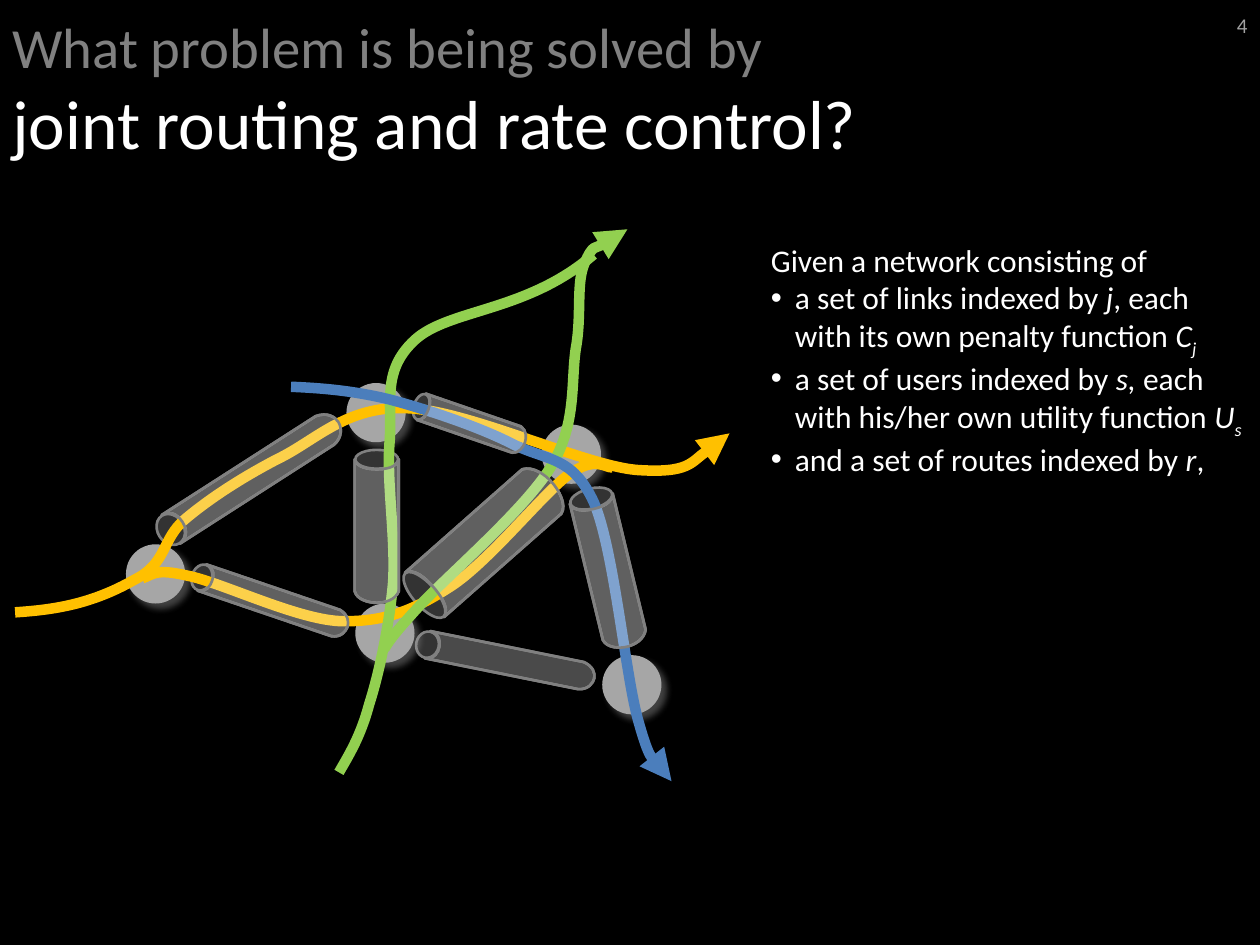
from dataclasses import dataclass
from typing import NamedTuple

from lxml.etree import SubElement
from pptx import Presentation
from pptx.dml.color import RGBColor
from pptx.enum.shapes import MSO_SHAPE
from pptx.enum.text import MSO_ANCHOR, PP_ALIGN
from pptx.oxml.ns import qn
from pptx.util import Inches, Pt
from math import cos, radians, sin


@dataclass(frozen=True)
class Theme:
    font: str = "Calibri"
    back: str = "000000"
    text: str = "FFFFFF"
    muted: str = "808080"
    number: str = "A2A2A2"
    pipe: str = "7F7F7F"
    glass: str = "F8F8F8"
    mouth: str = "333333"
    edge: str = "808080"
    node: str = "A6A6A6"
    orange: str = "FFC000"
    green: str = "92D050"
    blue: str = "4B7EBC"
    small_title: float = 32.4
    big_title: float = 39.6
    body: float = 18
    number_size: float = 12
    edge_width: float = 1.5
    flow_width: float = 6


class Pipe(NamedTuple):
    x: float
    y: float
    length: float
    width: float
    rotation: float
    mouth: float
    busy: bool = True


class Flow(NamedTuple):
    color: str
    arrow: bool
    points: list


class Span(NamedTuple):
    text: str
    italic: bool = False
    sub: bool = False


T = Theme()
NODE_SIZE = 0.47
NODES = [(2.75, 3.04), (1, 4.32), (4.3, 3.37), (2.82, 4.79), (4.78, 5.2)]
PIPES = [
    Pipe(1.23, 3.64, 1.58, 0.27, 327.3, 0.21),
    Pipe(3.32, 3.26, 0.87, 0.22, 19, 0.12),
    Pipe(4.23, 4.37, 1.21, 0.35, 76.4, 0.16),
    Pipe(2.42, 4.04, 1.14, 0.35, 90, 0.15),
    Pipe(3.38, 5.14, 1.35, 0.22, 11.4, 0.18, busy=False),
    Pipe(1.57, 4.67, 1.22, 0.22, 18.8, 0.16),
    Pipe(3.2, 4.04, 1.35, 0.47, 318.6, 0.18),
]
PIPE_OUTLINE = [
    ("moveTo", [(0, 1)]),
    ("lnTo", [(0.92, 1)]),
    ("cubicBezTo", [(0.98, 0.95), (1, 0.67), (1, 0.5)]),
    ("cubicBezTo", [(1, 0.32), (0.98, 0.08), (0.92, 0)]),
    ("lnTo", [(0, 0)]),
    ("cubicBezTo", [(0.06, 0.05), (0.07, 0.3), (0.07, 0.5)]),
    ("cubicBezTo", [(0.07, 0.68), (0.06, 0.95), (0, 1)]),
    ("close", []),
]
FLOWS = [
    Flow(T.orange, True, [
        (0.12, 4.86), (0.42, 4.84), (0.72, 4.8), (1.07, 4.6), (1.33, 4.47), (1.28, 4.28),
        (1.47, 4.12), (1.66, 3.96), (1.92, 3.79), (2.21, 3.64), (2.5, 3.5), (2.75, 3.22),
        (3.22, 3.24), (3.7, 3.25), (4.62, 3.69), (5.05, 3.73), (5.48, 3.76), (5.72, 3.49),
        (5.79, 3.44)]),
    Flow(T.orange, False, [
        (1.13, 4.59), (1.22, 4.56), (1.23, 4.51), (1.49, 4.57), (1.75, 4.62), (2.34, 4.91),
        (2.69, 4.93), (3.03, 4.94), (3.26, 4.86), (3.57, 4.66), (3.87, 4.47), (4.3, 3.93),
        (4.51, 3.77), (4.73, 3.61), (4.81, 3.72), (4.86, 3.71)]),
    Flow(T.green, False, [
        (2.69, 6.13), (2.77, 5.99), (2.86, 5.85), (2.93, 5.59), (3.01, 5.34), (3.09, 4.96),
        (3.12, 4.62), (3.14, 4.27), (3.07, 3.85), (3.09, 3.53), (3.12, 3.21), (3.02, 2.95),
        (3.29, 2.7), (3.56, 2.45), (4.18, 2.48), (4.71, 2.02)]),
    Flow(T.green, True, [
        (3.05, 5.15), (3.09, 5.09), (3.1, 5.06), (3.32, 4.82), (3.54, 4.58), (4.16, 4.05),
        (4.37, 3.71), (4.58, 3.37), (4.53, 3.04), (4.57, 2.77), (4.62, 2.5), (4.57, 2.25),
        (4.64, 2.09), (4.71, 1.93), (4.95, 1.87), (4.98, 1.82)]),
    Flow(T.blue, True, [
        (2.31, 3.07), (2.55, 3.08), (2.8, 3.1), (3.09, 3.17), (3.39, 3.25), (3.81, 3.39),
        (4.08, 3.53), (4.35, 3.66), (4.54, 3.62), (4.71, 3.98), (4.87, 4.34), (4.96, 5.33),
        (5.06, 5.7), (5.16, 6.06), (5.27, 6.1), (5.31, 6.19), (5.36, 6.27), (5.33, 6.2),
        (5.33, 6.2)]),
]
INTRO = [Span("Given a network consisting of")]
BULLETS = [
    [Span("a set of links indexed by "), Span("j", True),
     Span(", each with its own penalty function "), Span("C", True), Span("j", True, True)],
    [Span("a set of users indexed by "), Span("s,", True),
     Span(" each with his/her own utility function "), Span("U", True), Span("s", True, True)],
    [Span("and a set of routes indexed by "), Span("r", True), Span(",")],
]


def paint(sp, color: str, opacity: int = 100) -> None:
    sp.fill.solid()
    sp.fill.fore_color.rgb = RGBColor.from_string(color)
    if opacity < 100:
        clr = sp._element.spPr.find(qn("a:solidFill"))[0]
        SubElement(clr, qn("a:alpha"), val=str(opacity * 1000))


def stroke(sp, color: str, width: float) -> None:
    sp.line.color.rgb = RGBColor.from_string(color)
    sp.line.width = Pt(width)


def add_outline(s, steps: list):
    xs, ys = zip(*[pt for _, pts in steps for pt in pts])
    left, top, right, bottom = [Inches(v) for v in (min(xs), min(ys), max(xs), max(ys))]
    builder = s.shapes.build_freeform(left, top)
    builder.add_line_segments([(right, top), (right, bottom), (left, bottom)])
    sp = builder.convert_to_shape()
    sp.shadow.inherit = False
    outline = sp._element.spPr.find(".//" + qn("a:path"))
    for child in list(outline):
        outline.remove(child)
    for command, pts in steps:
        step = SubElement(outline, qn("a:" + command))
        for x, y in pts:
            SubElement(step, qn("a:pt"), x=str(Inches(x) - left), y=str(Inches(y) - top))
    return sp


def add_ellipse(s, x: float, y: float, w: float, h: float, color: str):
    sp = s.shapes.add_shape(MSO_SHAPE.OVAL, Inches(x), Inches(y), Inches(w), Inches(h))
    sp.shadow.inherit = False
    paint(sp, color)
    return sp


def add_tube(s, pipe: Pipe, color: str, opacity: int) -> None:
    sp = add_outline(s, [
        (command, [(pipe.x + u * pipe.length, pipe.y + v * pipe.width) for u, v in pts])
        for command, pts in PIPE_OUTLINE])
    sp.rotation = pipe.rotation
    paint(sp, color, opacity)
    stroke(sp, T.edge, T.edge_width)


def add_mouth(s, pipe: Pipe) -> None:
    angle, half = radians(pipe.rotation), pipe.length / 2
    cx = pipe.x + half - half * cos(angle)
    cy = pipe.y + pipe.width / 2 - half * sin(angle)
    w = pipe.width - 0.01
    sp = add_ellipse(s, cx - w / 2, cy - pipe.mouth / 2, w, pipe.mouth, T.mouth)
    sp.rotation = (pipe.rotation - 90) % 360
    stroke(sp, T.edge, T.edge_width)


def add_node(s, x: float, y: float) -> None:
    sp = add_ellipse(s, x, y, NODE_SIZE, NODE_SIZE, T.node)
    sp.line.fill.background()
    effects = sp._element.spPr.find(qn("a:effectLst"))
    shadow = SubElement(effects, qn("a:outerShdw"), blurRad=str(Pt(4)), dist=str(Pt(4)),
                        dir="2700000", algn="tl", rotWithShape="0")
    clr = SubElement(shadow, qn("a:srgbClr"), val=T.node)
    SubElement(clr, qn("a:alpha"), val="40000")


def add_flow(s, flow: Flow) -> None:
    start, *rest = flow.points
    curves = [("cubicBezTo", rest[i:i + 3]) for i in range(0, len(rest), 3)]
    sp = add_outline(s, [("moveTo", [start]), *curves])
    sp.fill.background()
    stroke(sp, flow.color, T.flow_width)
    if flow.arrow:
        SubElement(sp.line._get_or_add_ln(), qn("a:tailEnd"), type="triangle")


def add_text(s, x: float, y: float, w: float, h: float, anchor=MSO_ANCHOR.TOP):
    tf = s.shapes.add_textbox(Inches(x), Inches(y), Inches(w), Inches(h)).text_frame
    tf.word_wrap = True
    tf.vertical_anchor = anchor
    return tf


def style(r, size: float, color: str) -> None:
    r.font.name, r.font.size = T.font, Pt(size)
    r.font.color.rgb = RGBColor.from_string(color)


def add_spans(p, spans: list, bullet: bool = False) -> None:
    if bullet:
        pPr = p._p.get_or_add_pPr()
        pPr.set("marL", str(Inches(0.19)))
        pPr.set("indent", str(Inches(-0.19)))
        SubElement(pPr, qn("a:buFont"), typeface="Arial")
        SubElement(pPr, qn("a:buChar"), char="•")
    for span in spans:
        r = p.add_run()
        r.text = span.text
        style(r, T.body, T.text)
        r.font.italic = span.italic
        if span.sub:
            r._r.get_or_add_rPr().set("baseline", "-25000")


def add_texts(s) -> None:
    p = add_text(s, 0, 0, 10, 1.39, MSO_ANCHOR.MIDDLE).paragraphs[0]
    p.text = "What problem is being solved by \vjoint routing and rate control?"
    style(p.runs[0], T.small_title, T.muted)
    style(p.runs[1], T.big_title, T.text)
    p = add_text(s, 9.17, 0, 0.83, 0.4, MSO_ANCHOR.MIDDLE).paragraphs[0]
    p.text = "4"
    p.alignment = PP_ALIGN.RIGHT
    style(p.runs[0], T.number_size, T.number)
    tf = add_text(s, 6.02, 1.86, 3.98, 1.92)
    add_spans(tf.paragraphs[0], INTRO)
    for spans in BULLETS:
        add_spans(tf.add_paragraph(), spans, bullet=True)


def main() -> None:
    prs = Presentation()
    prs.slide_width, prs.slide_height = Inches(10), Inches(7.5)
    s = prs.slides.add_slide(prs.slide_layouts[6])
    s.background.fill.solid()
    s.background.fill.fore_color.rgb = RGBColor.from_string(T.back)
    for pipe in PIPES:
        add_tube(s, pipe, T.pipe, 25)
        add_mouth(s, pipe)
        if not pipe.busy:
            add_tube(s, pipe, T.glass, 20)
    for x, y in NODES:
        add_node(s, x, y)
    for flow in FLOWS:
        add_flow(s, flow)
    for pipe in PIPES:
        if pipe.busy:
            add_tube(s, pipe, T.glass, 30)
    add_texts(s)
    prs.save("out.pptx")


if __name__ == "__main__":
    main()
